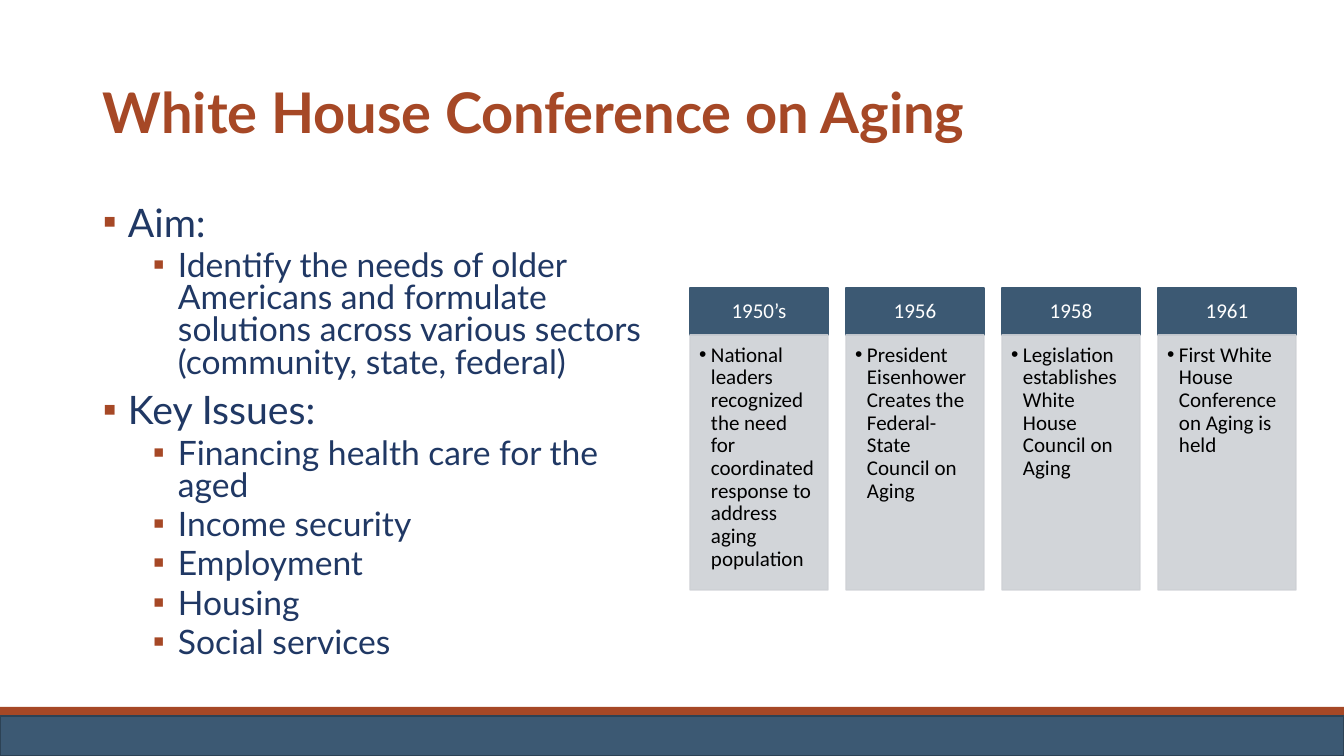
from lxml.etree import SubElement
from pptx import Presentation
from pptx.dml.color import RGBColor
from pptx.enum.shapes import MSO_SHAPE as Shape
from pptx.enum.text import MSO_ANCHOR as Anchor, MSO_AUTO_SIZE as AutoSize, PP_ALIGN as Align
from pptx.oxml.ns import qn
from pptx.util import Pt

COLORS = {
    "rust": "A64826", "slate": "3C5973", "edge": "2C4255", "navy": "203864",
    "panel": "CED1D5", "white": "FFFFFF", "black": "000000",
}
EMU_PER_PX = 914400 / 100.8
WIDTH, HEIGHT = 1344, 756

# Outline level and text
AIMS = [
    (0, "Aim:"),
    (1, "Identify the needs of older Americans and formulate solutions "
        "across various sectors (community, state, federal)"),
    (0, "Key Issues:"),
    (1, "Financing health care for the aged"),
    (1, "Income security"),
    (1, "Employment"),
    (1, "Housing"),
    (1, "Social services"),
]
TIMELINE = [
    ("1950’s", "National leaders recognized the need for coordinated "
               "response to address aging population"),
    ("1956", "President Eisenhower Creates the Federal-State Council on Aging"),
    ("1958", "Legislation establishes White House Council on Aging"),
    ("1961", "First White House Conference on Aging is held"),
]


def px(value):
    return round(value * EMU_PER_PX)


def rgb(name):
    return RGBColor.from_string(COLORS[name])


def set_alpha(fill, percent):
    """Make a solid fill partly transparent."""
    for color in fill.iter(qn("a:srgbClr")):
        SubElement(color, qn("a:alpha"), val=str(percent * 1000))


def add_bullet(paragraph, char, color, margin, hanging):
    properties = paragraph._p.get_or_add_pPr()
    properties.set("marL", str(px(margin)))
    properties.set("indent", str(-px(hanging)))
    bullet_color = SubElement(properties, qn("a:buClr"))
    SubElement(bullet_color, qn("a:srgbClr"), val=COLORS[color])
    SubElement(properties, qn("a:buFont"), typeface="Arial")
    SubElement(properties, qn("a:buChar"), char=char)


def write(paragraph, text, *, size, color, font="Lato", bold=False,
          align=Align.LEFT, spacing=0.9, before=0, bullet=None):
    if bullet:
        add_bullet(paragraph, **bullet)
    paragraph.alignment = align
    paragraph.line_spacing = spacing
    paragraph.space_before = Pt(before)
    run = paragraph.add_run()
    run.text = text
    run.font.name = font
    run.font.size = Pt(size)
    run.font.bold = bold
    run.font.color.rgb = rgb(color)


def set_frame(frame, anchor=Anchor.TOP, insets=(10, 5, 10, 5)):
    frame.word_wrap = True
    frame.auto_size = AutoSize.NONE
    frame.vertical_anchor = anchor
    (frame.margin_left, frame.margin_top,
     frame.margin_right, frame.margin_bottom) = map(px, insets)


def add_box(slide, left, top, width, height, fill, line=None, alpha=None):
    shape = slide.shapes.add_shape(Shape.RECTANGLE, *map(px, (left, top, width, height)))
    shape.shadow.inherit = False
    shape.fill.solid()
    shape.fill.fore_color.rgb = rgb(fill)
    if line:
        shape.line.color.rgb = rgb(line)
        shape.line.width = Pt(1)
    else:
        shape.line.fill.background()
    if alpha:
        set_alpha(shape._element.spPr, alpha)
    return shape


def add_title(slide, text):
    title = slide.shapes.title
    title.left, title.top, title.width, title.height = map(px, (93, 57, 1159, 116))
    set_frame(title.text_frame, Anchor.MIDDLE)
    write(title.text_frame.paragraphs[0], text, size=40, color="rust", bold=True)


def add_outline(slide, items):
    box = slide.shapes.add_textbox(*map(px, (93, 202, 588, 480)))
    frame = box.text_frame
    set_frame(frame)
    for index, (level, text) in enumerate(items):
        paragraph = frame.add_paragraph() if index else frame.paragraphs[0]
        paragraph.level = level
        write(paragraph, text, size=24 if level else 28, color="navy", spacing=0.8,
              before=(5 if level else 10) if index else 0,
              bullet=dict(char="▪", color="rust", margin=75 if level else 25, hanging=25))


def add_milestone(slide, left, year, event):
    header = add_box(slide, left, 288, 138, 47, "slate", "slate")
    set_frame(header.text_frame, Anchor.MIDDLE, (12, 7, 12, 7))
    write(header.text_frame.paragraphs[0], year, size=15, color="white",
          font="Calibri", align=Align.CENTER)

    panel = add_box(slide, left, 335, 138, 255, "panel", "panel", alpha=90)
    set_frame(panel.text_frame, insets=(9, 9, 12, 13))
    write(panel.text_frame.paragraphs[0], event, size=15, color="black", font="Calibri",
          bullet=dict(char="•", color="black", margin=12, hanging=12))


def main():
    presentation = Presentation()
    presentation.slide_width, presentation.slide_height = px(WIDTH), px(HEIGHT)
    slide = presentation.slides.add_slide(presentation.slide_layouts[5])

    # Footer bands
    add_box(slide, 0, 707, WIDTH, 49, "rust")
    add_box(slide, 0, 716, WIDTH, 40, "slate", "edge")

    # Title and outline
    add_title(slide, "White House Conference on Aging")
    add_outline(slide, AIMS)

    # Timeline columns
    for column, (year, event) in enumerate(TIMELINE):
        add_milestone(slide, 690 + 156 * column, year, event)

    presentation.save("out.pptx")


if __name__ == "__main__":
    main()
